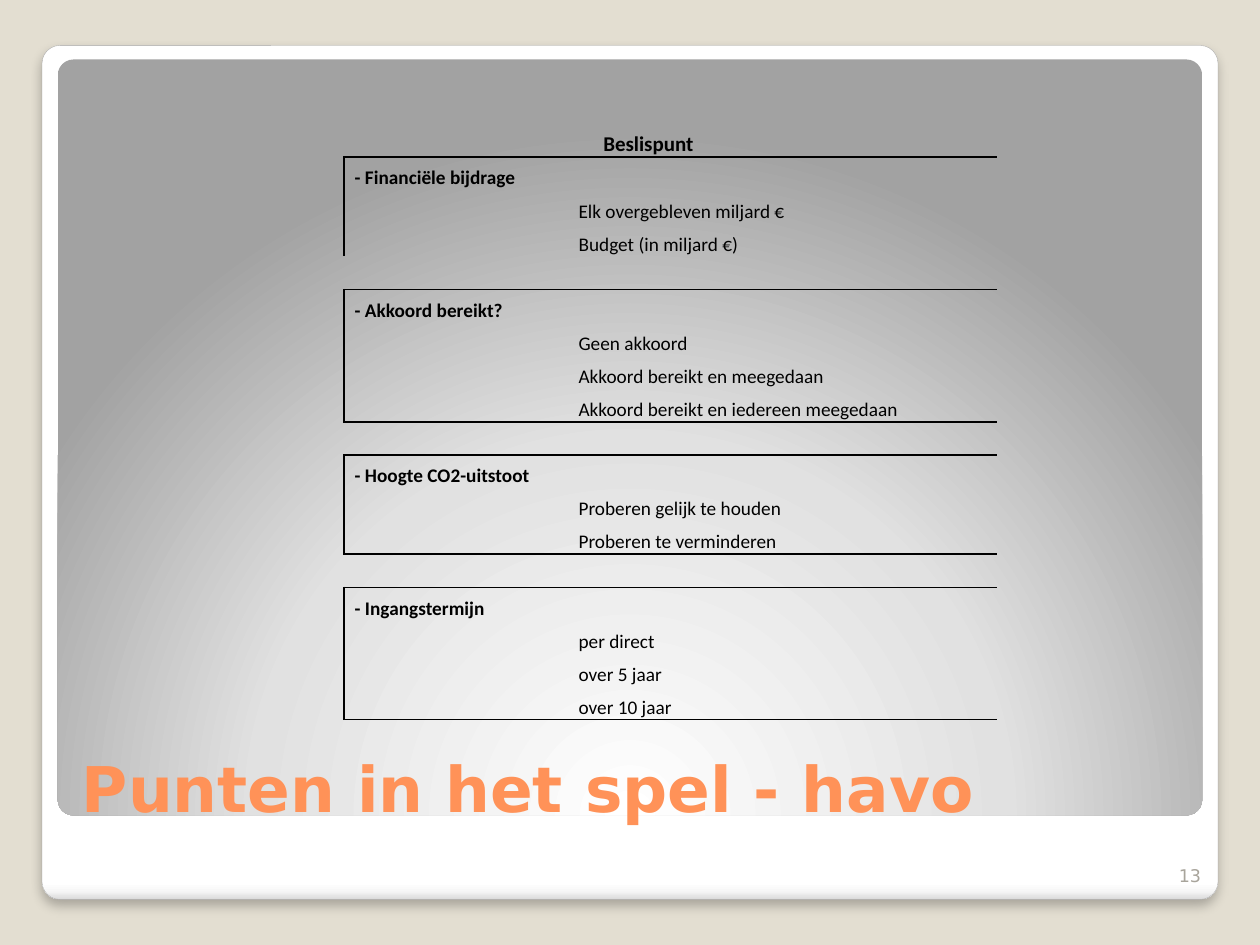
from dataclasses import dataclass

from lxml import etree
from pptx import Presentation
from pptx.dml.color import RGBColor
from pptx.enum.shapes import MSO_SHAPE
from pptx.enum.text import MSO_ANCHOR, PP_ALIGN
from pptx.oxml import parse_xml
from pptx.oxml.ns import qn
from pptx.util import Pt

ROUNDED = MSO_SHAPE.ROUNDED_RECTANGLE
BOTTOM = MSO_ANCHOR.BOTTOM
LEFT, CENTER, RIGHT = PP_ALIGN.LEFT, PP_ALIGN.CENTER, PP_ALIGN.RIGHT
DRAWING_NS = "http://schemas.openxmlformats.org/drawingml/2006/main"


@dataclass(frozen=True)
class Theme:
    """Colours, fonts and type sizes of the slide."""
    backdrop: str = "E3DED1"
    frame_line: str = "A4A4A4"
    ink: str = "000000"
    accent: str = "FF9258"
    muted: str = "A8A49B"
    frame_stops: tuple = ((0, "FFFFFF"), (98, "FFFFFF"), (99, "F7F7F7"), (100, "DADADA"))
    panel_stops: tuple = ((0, "FFFFFF"), (55, "E1E1E1"), (100, "A2A2A2"))
    display_font: str = "DejaVu Sans"
    table_font: str = "Calibri"
    title_size: int = 36
    header_size: int = 12
    body_size: int = 11
    number_size: int = 10


THEME = Theme()

SECTIONS = [
    ("Financiële bijdrage", ["Elk overgebleven miljard €", "Budget (in miljard €)"]),
    ("Akkoord bereikt?", ["Geen akkoord", "Akkoord bereikt en meegedaan",
                          "Akkoord bereikt en iedereen meegedaan"]),
    ("Hoogte CO2-uitstoot", ["Proberen gelijk te houden", "Proberen te verminderen"]),
    ("Ingangstermijn", ["per direct", "over 5 jaar", "over 10 jaar"]),
]


def write(frame, text, *, size, color=THEME.ink, font=THEME.table_font,
          bold=False, align=LEFT, spacing=None):
    """Write one formatted paragraph into a text frame."""
    paragraph = frame.paragraphs[0]
    paragraph.alignment = align
    paragraph.line_spacing = spacing
    run = paragraph.add_run()
    run.text = text
    run.font.size = Pt(size)
    run.font.name = font
    run.font.bold = bold
    run.font.color.rgb = RGBColor.from_string(color)


def gradient(stops, direction):
    """Return a gradient fill element with the given stops and direction."""
    marks = "".join(f'<a:gs pos="{position * 1000}"><a:srgbClr val="{color}"/></a:gs>'
                    for position, color in stops)
    return parse_xml(f'<a:gradFill xmlns:a="{DRAWING_NS}" rotWithShape="1">'
                     f'<a:gsLst>{marks}</a:gsLst>{direction}</a:gradFill>')


def add_card(slide, box, stops, direction):
    """Add a gently rounded gradient rectangle."""
    card = slide.shapes.add_shape(ROUNDED, *map(Pt, box))
    card.adjustments[0] = 0.021
    card.shadow.inherit = False
    card.line.fill.background()
    card.element.spPr.insert(2, gradient(stops, direction))
    return card


def add_backdrop(slide, frame_box, panel_box):
    """Place the white frame with its shadow and the grey panel inside it."""
    slide.background.fill.solid()
    slide.background.fill.fore_color.rgb = RGBColor.from_string(THEME.backdrop)
    frame = add_card(slide, frame_box, THEME.frame_stops, '<a:lin ang="5400000" scaled="0"/>')
    frame.line.color.rgb = RGBColor.from_string(THEME.frame_line)
    frame.line.width = Pt(0.16)
    frame.element.spPr.find(qn("a:effectLst")).append(parse_xml(
        f'<a:outerShdw xmlns:a="{DRAWING_NS}" blurRad="{Pt(6)}" dist="{Pt(4)}" dir="5400000">'
        f'<a:srgbClr val="{THEME.ink}"><a:alpha val="25000"/></a:srgbClr></a:outerShdw>'))
    add_card(slide, panel_box, THEME.panel_stops,
             '<a:path path="circle">'
             '<a:fillToRect l="50000" t="175000" r="50000" b="-75000"/></a:path>')


def add_title(slide, box, text):
    """Place the title placeholder in front of the backdrop."""
    title = slide.shapes.title
    title.left, title.top, title.width, title.height = map(Pt, box)
    title.text_frame.vertical_anchor = BOTTOM
    write(title.text_frame, text, size=THEME.title_size, color=THEME.accent,
          font=THEME.display_font, bold=True)
    slide.shapes.element.append(title.element)


def add_page_number(slide, box, text):
    """Place the page number at the lower right."""
    number = slide.shapes.add_textbox(*map(Pt, box)).text_frame
    number.word_wrap = True
    number.vertical_anchor = BOTTOM
    write(number, text, size=THEME.number_size, color=THEME.muted,
          font=THEME.display_font, align=RIGHT)


def table_rows():
    """Return heading, item and ruled edges for each table row."""
    rows = [("Beslispunt", "", "B")]
    for index, (heading, items) in enumerate(SECTIONS):
        if index:
            rows.append(("", "", "B" if index == 1 else "TB"))
        rows.append((f" - {heading}", "", "LT"))
        rows += [("", item, "L") for item in items[:-1]]
        rows.append(("", items[-1], "LB" if index else "L"))
    return rows


def style_cell(cell, edges):
    """Clear the fill, set the margins and rule the named edges of a cell."""
    cell.fill.background()
    cell.vertical_anchor = BOTTOM
    cell.margin_left = cell.margin_right = Pt(3.6)
    cell.margin_top = cell.margin_bottom = 0
    properties = cell._tc.get_or_add_tcPr()
    for index, side in enumerate("LRTB"):
        paint = (f'<a:solidFill><a:srgbClr val="{THEME.ink}"/></a:solidFill>'
                 if side in edges else "<a:noFill/>")
        properties.insert(index, parse_xml(
            f'<a:ln{side} xmlns:a="{DRAWING_NS}" w="{Pt(1)}">{paint}</a:ln{side}>'))


def add_points_table(slide, box, widths, header_height):
    """Place the table of decision points with its ruled sections."""
    rows = table_rows()
    table = slide.shapes.add_table(len(rows), len(widths), *map(Pt, box)).table
    table.first_row = table.horz_banding = False
    for column, width in zip(table.columns, widths):
        column.width = Pt(width)
    row_height = (box[3] - header_height) / (len(rows) - 1)
    for r, (heading, item, edges) in enumerate(rows):
        table.rows[r].height = Pt(row_height if r else header_height)
        for c, text in enumerate((heading, item, "")):
            cell = table.cell(r, c)
            style_cell(cell, edges if c == 0 else edges.replace("L", ""))
            if text:
                write(cell.text_frame, text, bold=c == 0, spacing=1.15,
                      size=THEME.body_size if r else THEME.header_size,
                      align=LEFT if r else CENTER)
            else:
                etree.SubElement(cell.text_frame.paragraphs[0]._p, qn("a:endParaRPr"),
                                 sz=str(THEME.body_size * 100))
    table.cell(0, 0).merge(table.cell(0, 1))


def main():
    """Build the slide and save it."""
    deck = Presentation()
    deck.slide_width, deck.slide_height = Pt(720), Pt(540)
    slide = deck.slides.add_slide(deck.slide_layouts[5])
    add_backdrop(slide, (24, 26, 672, 488), (33, 34, 654, 432))
    add_title(slide, (39.6, 392.4, 684 - 39.6, 82.8), "Punten in het spel - havo")
    add_page_number(slide, (657.4, 481, 36, 28.8), "13")
    add_points_table(slide, (196.6, 69.1, 373, 342.4), (130.4, 217.4, 25.2), 20.7)
    deck.save("out.pptx")


if __name__ == "__main__":
    main()
